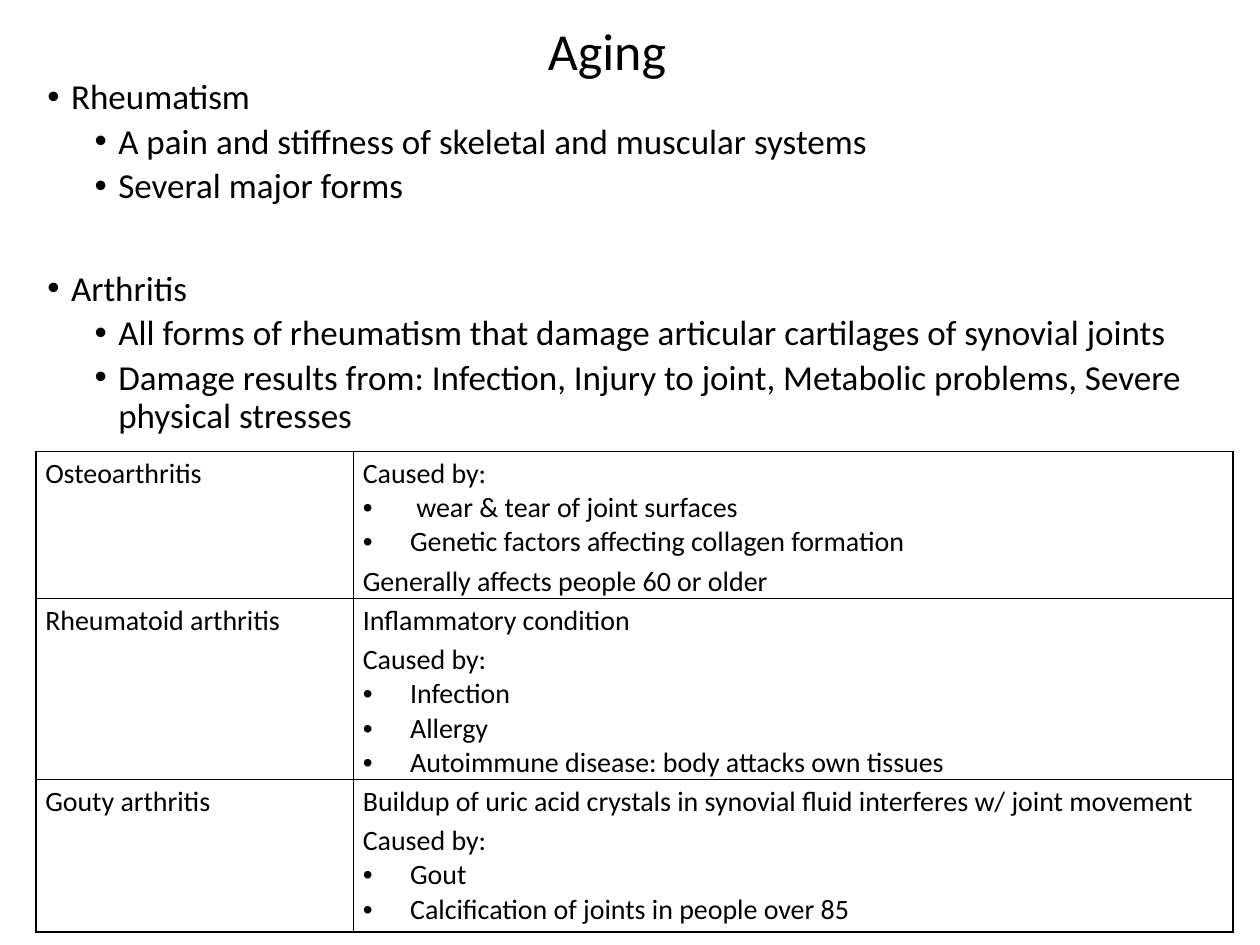
from lxml.etree import SubElement
from pptx import Presentation
from pptx.dml.color import RGBColor
from pptx.enum.text import MSO_ANCHOR
from pptx.oxml.ns import qn
from pptx.util import Pt

FONT = "Calibri"
BLACK = "000000"

OUTLINE = [
    ("Rheumatism", [
        "A pain and stiffness of skeletal and muscular systems",
        "Several major forms",
    ]),
    ("Arthritis", [
        "All forms of rheumatism that damage articular cartilages of synovial joints",
        "Damage results from: Infection, Injury to joint, Metabolic problems, "
        "Severe physical stresses",
    ]),
]

# Each row: height, name, then (text, is bulleted) lines
ARTHRITIS_FORMS = [
    (84, "Osteoarthritis", [
        ("Caused by:", False),
        (" wear & tear of joint surfaces", True),
        ("Genetic factors affecting collagen formation", True),
        ("Generally affects people 60 or older", False),
    ]),
    (103.5, "Rheumatoid arthritis", [
        ("Inflammatory condition", False),
        ("Caused by:", False),
        ("Infection", True),
        ("Allergy", True),
        ("Autoimmune disease: body attacks own tissues", True),
    ]),
    (87, "Gouty arthritis", [
        ("Buildup of uric acid crystals in synovial fluid interferes w/ joint movement", False),
        ("Caused by:", False),
        ("Gout", True),
        ("Calcification of joints in people over 85", True),
    ]),
]


def color(value):
    return RGBColor.from_string(value)


def add_line(tf, text, size, spacing=1.0, before=0, margin=0, hang=0, level=0):
    """Add a paragraph; a hanging indent gives it a bullet."""
    p = tf.paragraphs[0]
    if p.runs:
        p = tf.add_paragraph()
    p.level = level
    p.line_spacing = spacing
    p.space_before = Pt(before)
    if hang:
        pPr = p._p.get_or_add_pPr()
        pPr.set("marL", str(Pt(margin)))
        pPr.set("indent", str(-Pt(hang)))
        SubElement(pPr, qn("a:buFont")).set("typeface", "Arial")
        SubElement(pPr, qn("a:buChar")).set("char", "•")
    r = p.add_run()
    r.text = text
    r.font.name = FONT
    r.font.size = Pt(size)
    r.font.color.rgb = color(BLACK)


def add_text_box(s, box):
    tf = s.shapes.add_textbox(*map(Pt, box)).text_frame
    tf.word_wrap = True
    return tf


def add_title(s, box, text):
    tf = add_text_box(s, box)
    tf.vertical_anchor = MSO_ANCHOR.MIDDLE
    add_line(tf, text, 29.7, spacing=0.9)


def add_outline(s, box, topics):
    tf = add_text_box(s, box)
    for i, (topic, details) in enumerate(topics):
        # Later topics stand one line further down
        add_line(tf, topic, 20, 0.9, before=37 if i else 7.5, margin=13.5, hang=13.5)
        for detail in details:
            add_line(tf, detail, 20, 0.9, before=3.8, margin=40.5, hang=13.5, level=1)


def style_cell(cell):
    cell.margin_left = cell.margin_right = Pt(5.4)
    cell.margin_top = cell.margin_bottom = 0
    tcPr = cell._tc.get_or_add_tcPr()
    for side in ("lnL", "lnR", "lnT", "lnB"):
        ln = SubElement(tcPr, qn(f"a:{side}"), w=str(Pt(1)))
        fill = SubElement(ln, qn("a:solidFill"))
        SubElement(fill, qn("a:srgbClr"), val=BLACK)
    cell.fill.background()


def add_forms_table(s, box, forms):
    table = s.shapes.add_table(len(forms), 2, *map(Pt, box)).table
    table.first_row = table.horz_banding = False
    name_width = 181.5
    table.columns[0].width = Pt(name_width)
    table.columns[1].width = Pt(box[2] - name_width)
    for i, (height, name, lines) in enumerate(forms):
        table.rows[i].height = Pt(height)
        name_cell, detail_cell = table.cell(i, 0), table.cell(i, 1)
        style_cell(name_cell)
        style_cell(detail_cell)
        add_line(name_cell.text_frame, name, 16, 1.15)
        for text, bulleted in lines:
            indent = 27 if bulleted else 0
            add_line(detail_cell.text_frame, text, 16, 1.0 if bulleted else 1.15,
                     margin=indent, hang=indent)


def main():
    prs = Presentation()
    prs.slide_width, prs.slide_height = Pt(720), Pt(540)
    s = prs.slides.add_slide(prs.slide_layouts[6])
    add_title(s, (306, 12, 94.5, 37.5), "Aging")
    add_outline(s, (20, 42, 702, 216), OUTLINE)
    add_forms_table(s, (20.5, 258, 684, 274.5), ARTHRITIS_FORMS)
    prs.save("out.pptx")


if __name__ == "__main__":
    main()
